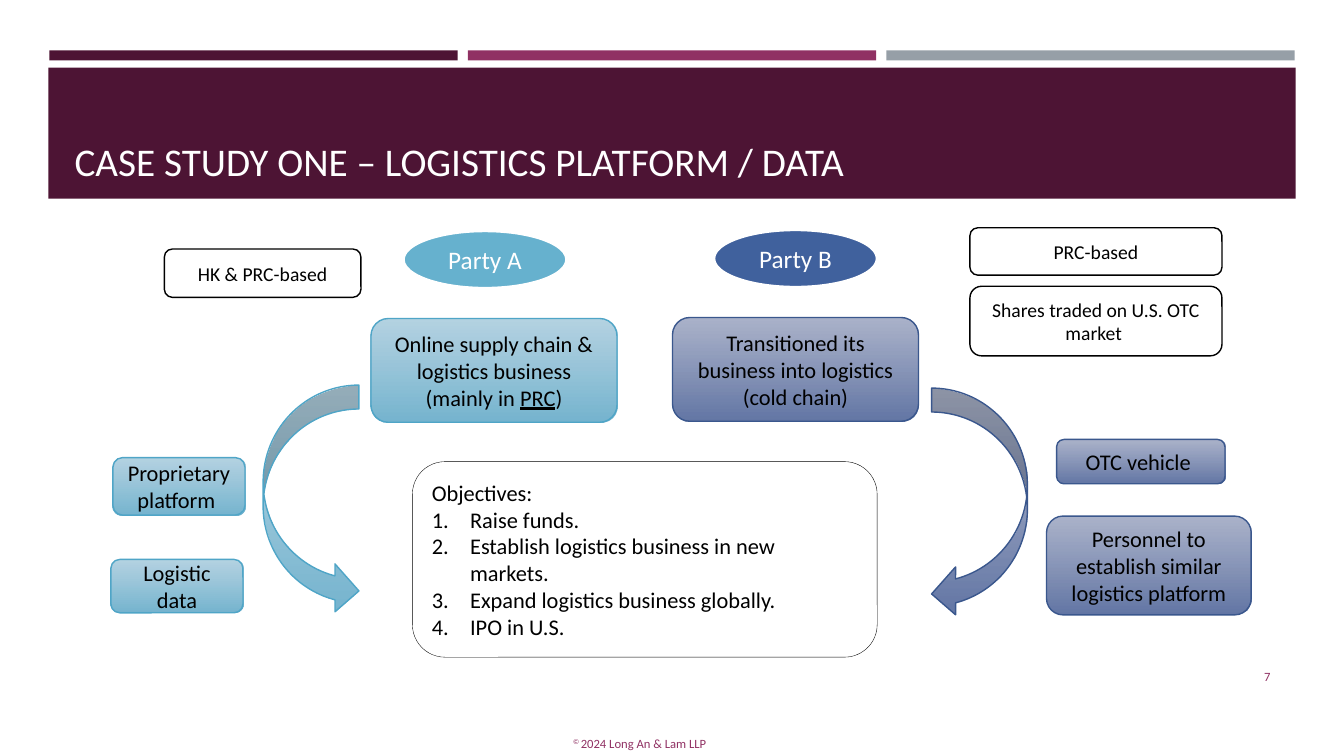
from lxml import etree
from pptx import Presentation
from pptx.dml.color import RGBColor
from pptx.enum.shapes import MSO_SHAPE
from pptx.enum.text import MSO_ANCHOR, PP_ALIGN
from pptx.oxml.ns import qn
from pptx.util import Inches, Pt

RECT, ROUND = MSO_SHAPE.RECTANGLE, MSO_SHAPE.ROUNDED_RECTANGLE
OVAL, CURVE = MSO_SHAPE.OVAL, MSO_SHAPE.CURVED_RIGHT_ARROW
LEFT, CENTER, RIGHT = PP_ALIGN.LEFT, PP_ALIGN.CENTER, PP_ALIGN.RIGHT
TOP, MIDDLE, BOTTOM = MSO_ANCHOR.TOP, MSO_ANCHOR.MIDDLE, MSO_ANCHOR.BOTTOM

COLORS = {
    "plum": "4D1434", "berry": "903163", "gray": "969FA7",
    "white": "FFFFFF", "black": "000000",
    "sky": "66B1CE", "sky_top": "ACCEDF", "sky_low": "75B4CF", "sky_line": "4FA5C7",
    "navy": "40619D", "navy_top": "A1AAC4", "navy_low": "6376A5", "navy_line": "3A578D",
}
STYLES = {
    "sky": {"fill": ("sky_top", "sky_low"), "line": "sky_line", "width": 1},
    "navy": {"fill": ("navy_top", "navy_low"), "line": "navy_line", "width": 1},
    "note": {"fill": ("white",), "line": "black", "width": 1},
    "goals": {"fill": ("white",), "line": "black", "width": 0.25},
    "oval_sky": {"fill": ("sky",), "line": "white", "width": 2},
    "oval_navy": {"fill": ("navy",), "line": "white", "width": 2},
}


def rgb(name):
    """Return the named colour."""
    return RGBColor.from_string(COLORS[name])


def place(box, part):
    """Turn a part measured from the corner of a box into slide lengths."""
    left, top, wide, high = part
    return [Inches(n) for n in (box[0] + left, box[1] + top, wide, high)]


def style_font(font, size, color, **extra):
    """Set the values of a font."""
    values = {"name": "Calibri", "size": Pt(size), **extra}
    for key, value in values.items():
        setattr(font, key, value)
    font.color.rgb = rgb(color)


def write(frame, paras, size, color, align=CENTER, anchor=MIDDLE):
    """Write paragraphs, each a list of text and font-value pairs."""
    frame.word_wrap = True
    frame.vertical_anchor = anchor
    for i, runs in enumerate(paras):
        para = frame.add_paragraph() if i else frame.paragraphs[0]
        para.alignment = align
        for text, extra in runs:
            run = para.add_run()
            run.text = text
            style_font(run.font, size, color, **extra)


def plain(*lines):
    """Make unformatted paragraphs."""
    return [[(line, {})] for line in lines]


def add_shape(slide, kind, spot, look):
    """Add a shape with the fill and line of a style."""
    shape = slide.shapes.add_shape(kind, *spot)
    shape.shadow.inherit = False
    names = look["fill"]
    if len(names) == 1:
        shape.fill.solid()
        shape.fill.fore_color.rgb = rgb(names[0])
    else:
        shape.fill.gradient()
        shape.fill.gradient_angle = 270
        for stop, name in zip(shape.fill.gradient_stops, names):
            stop.color.rgb = rgb(name)
        first = next(shape._element.iter(qn("a:srgbClr")))
        etree.SubElement(first, qn("a:alpha"), val="90000")
    if "line" in look:
        shape.line.color.rgb = rgb(look["line"])
        shape.line.width = Pt(look["width"])
    else:
        shape.line.fill.background()
    return shape


def add_header(slide, box, title):
    """Draw the three bars and the title band."""
    for i, name in enumerate(("plum", "berry", "gray")):
        spot = place(box, (0.01 + 4.15 * i, 0, 4.05, 0.1))
        add_shape(slide, RECT, spot, {"fill": (name,)})
    add_shape(slide, RECT, place(box, (0, 0.17, box[2], 1.3)), {"fill": ("plum",)})
    head = slide.shapes.title
    spot = place(box, (0.16, 0.27, 12.06, 1.11))
    for key, value in zip(("left", "top", "width", "height"), spot):
        setattr(head, key, value)
    write(head.text_frame, plain(title), 28, "white", LEFT, BOTTOM)
    slide.shapes._spTree.append(head._element)


def add_party(slide, box, tone, name, oval, tiles, notes, arrow, flip=False):
    """Draw one party with its tiles, notes and curved arrow."""
    shape = add_shape(slide, OVAL, place(box, oval), STYLES["oval_" + tone])
    write(shape.text_frame, plain(name), 18, "white")
    for group, look, size in ((tiles, tone, 16), (notes, "note", 14)):
        for part, paras in group:
            shape = add_shape(slide, ROUND, place(box, part), STYLES[look])
            write(shape.text_frame, paras, size, "black")
    curve = add_shape(slide, CURVE, place(box, arrow), STYLES[tone])
    if flip:
        curve._element.spPr.find(qn("a:xfrm")).set("flipH", "1")


def add_goals(slide, box, head, goals):
    """Draw the box with the numbered objectives."""
    shape = add_shape(slide, ROUND, place(box, (0, 0, *box[2:])), STYLES["goals"])
    write(shape.text_frame, plain(head, *goals), 16, "black", LEFT)
    for para in shape.text_frame.paragraphs[1:]:
        props = para._p.get_or_add_pPr()
        props.set("marL", str(Inches(0.38)))
        props.set("indent", str(-Inches(0.38)))
        etree.SubElement(props, qn("a:buFont"), typeface="+mj-lt")
        etree.SubElement(props, qn("a:buAutoNum"), type="arabicPeriod")


def add_footer(slide, box):
    """Write the slide number and the copyright line."""
    mark = [[("© ", {}), ("2024 Long An & Lam LLP", {})]]
    parts = (
        ((0, 0.74, 6.67, 0.25), mark, CENTER, TOP),
        ((8.54, 0, 1.15, 0.4), plain("7"), RIGHT, MIDDLE),
    )
    for part, paras, align, anchor in parts:
        text = slide.shapes.add_textbox(*place(box, part))
        write(text.text_frame, paras, 9, "berry", align, anchor)
        if paras is mark:
            sign = text.text_frame.paragraphs[0].runs[0]
            sign.font._element.set("baseline", "30000")


def main():
    """Build and save the slide."""
    deck = Presentation()
    deck.slide_width, deck.slide_height = Inches(13.33), Inches(7.5)
    slide = deck.slides.add_slide(deck.slide_layouts[5])
    add_header(slide, (0.48, 0.5, 12.37, 1.47),
               "CASE STUDY ONE – LOGISTICS PLATFORM / DATA")
    business = [[("Online supply chain & logistics business (mainly in ", {}),
                 ("PRC", {"underline": True}), (")", {})]]
    add_party(
        slide, (1.1, 2.29, 5.02, 3.81), "sky", "Party A", (2.9, 0, 1.62, 0.57),
        [((2.58, 0.87, 2.44, 1.03), business),
         ((0.02, 2.25, 1.31, 0.57), plain("Proprietary ", "platform ")),
         ((0, 3.26, 1.31, 0.53), plain("Logistic data"))],
        [((0.53, 0.18, 1.95, 0.48), plain("HK & PRC-based"))],
        (1.51, 1.53, 0.95, 2.28))
    add_party(
        slide, (6.67, 2.26, 5.74, 3.87), "navy", "Party B", (0.41, 0.02, 1.62, 0.57),
        [((0, 0.89, 2.44, 1.03),
          plain("Transitioned its business into logistics (cold chain)")),
         ((3.81, 2.1, 1.67, 0.44), plain("OTC vehicle ")),
         ((3.71, 2.86, 2.03, 0.98),
          plain("Personnel to establish similar logistics platform"))],
        [((2.95, 0, 2.5, 0.47), plain("PRC-based")),
         ((2.95, 0.58, 2.5, 0.69), plain("Shares traded on U.S. OTC market "))],
        (2.57, 1.59, 0.95, 2.28), flip=True)
    add_goals(slide, (4.09, 4.58, 4.61, 1.94), "Objectives:",
              ("Raise funds.", "Establish logistics business in new markets.",
               "Expand logistics business globally.", "IPO in U.S."))
    add_footer(slide, (3.01, 6.51, 9.69, 0.99))
    deck.save("out.pptx")


if __name__ == "__main__":
    main()
